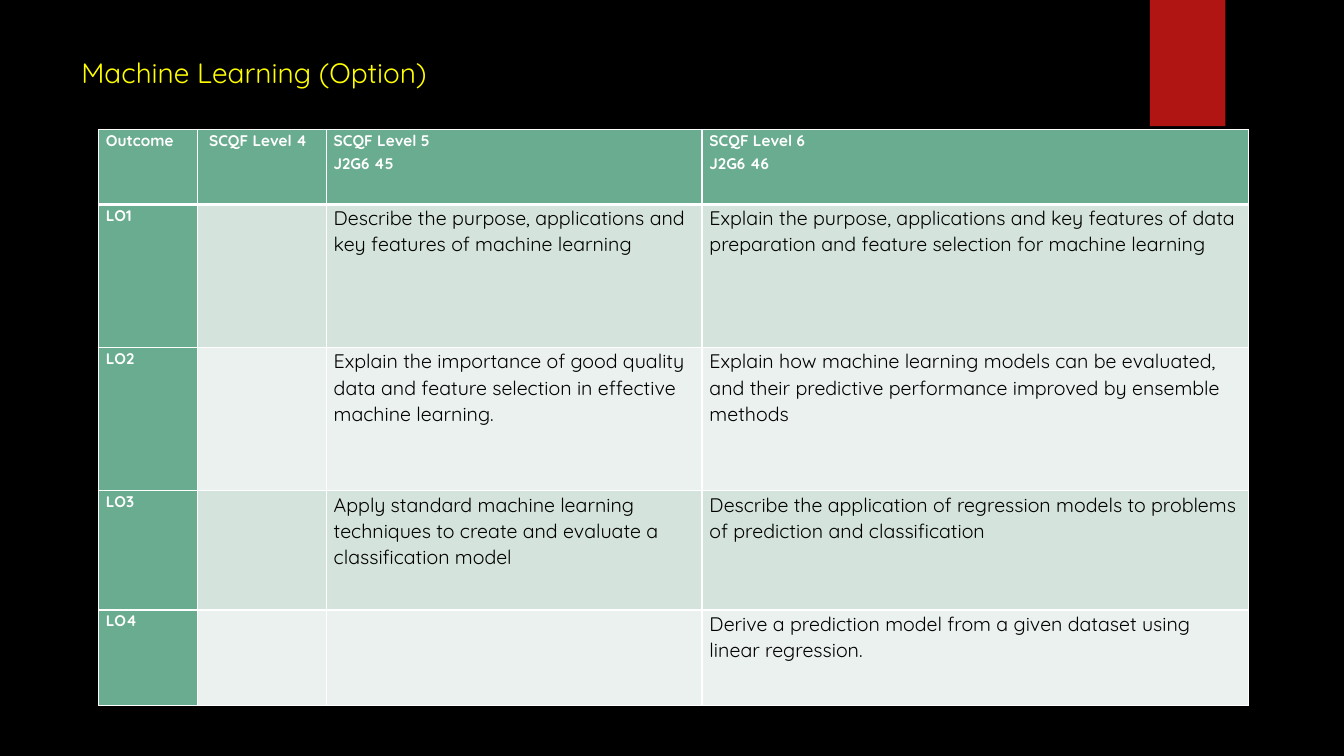
from lxml import etree
from pptx import Presentation, util as u
from pptx.dml.color import RGBColor
from pptx.enum import shapes, text
from pptx.oxml import ns

COLORS = {
    "background": "000000",
    "ribbon": "B01513",
    "title": "FFFF00",
    "heading": "6AAC90",
    "odd": "D4E3DB",
    "even": "EBF1EE",
    "light": "FFFFFF",
    "dark": "000000",
}

OUTCOMES = [
    ["Outcome", " SCQF Level 4", "SCQF Level 5\nJ2G6 45", "SCQF Level 6\nJ2G6 46"],
    ["LO1", "",
     "Describe the purpose, applications and key features of machine learning",
     "Explain the purpose, applications and key features of data preparation "
     "and feature selection for machine learning"],
    ["LO2", "",
     "Explain the importance of good quality data and feature selection in "
     "effective machine learning.",
     "Explain how machine learning models can be evaluated, and their predictive "
     "performance improved by ensemble methods"],
    ["LO3", "",
     "Apply standard machine learning techniques to create and evaluate a "
     "classification model",
     "Describe the application of regression models to problems of prediction "
     "and classification"],
    ["LO4", "", "",
     "Derive a prediction model from a given dataset using linear regression."],
]
COLUMN_WIDTHS = [2.49, 3.25, 9.47, 13.77]
ROW_HEIGHTS = [1.88, 3.61, 3.61, 3, 2.41]


class SlideBuilder:
    font = "Quicksand"

    def __init__(self, slide):
        self.slide = slide
        self.slide.background.fill.solid()
        self.slide.background.fill.fore_color.rgb = self.color("background")

    def color(self, name):
        return RGBColor.from_string(COLORS[name])

    def style(self, paragraph, size, color, bold=False):
        for run in paragraph.runs:
            run.font.name = self.font
            run.font.size = u.Pt(size)
            run.font.bold = bold
            run.font.color.rgb = self.color(color)

    def block(self, left, top, width, height, color):
        ribbon = self.slide.shapes.add_shape(
            shapes.MSO_SHAPE.RECTANGLE, *map(u.Cm, (left, top, width, height)))
        ribbon.shadow.inherit = False
        ribbon.fill.solid()
        ribbon.fill.fore_color.rgb = self.color(color)
        ribbon.line.fill.background()

    def title(self, words, left, top, width, height):
        heading = self.slide.shapes.add_textbox(*map(u.Cm, (left, top, width, height)))
        frame = heading.text_frame
        frame.word_wrap = True
        frame.vertical_anchor = text.MSO_ANCHOR.TOP
        frame.text = words
        self.style(frame.paragraphs[0], 20, "title")

    def borders(self, cell, bottom):
        properties = cell._tc.get_or_add_tcPr()
        for side, width in (("L", 1), ("R", 1), ("T", 1), ("B", bottom)):
            line = etree.SubElement(properties, ns.qn(f"a:ln{side}"), w=str(u.Pt(width)))
            fill = etree.SubElement(line, ns.qn("a:solidFill"))
            etree.SubElement(fill, ns.qn("a:srgbClr"), val=COLORS["light"])

    def cell(self, cell, words, fill, is_heading, bottom):
        self.borders(cell, bottom)
        cell.fill.solid()
        cell.fill.fore_color.rgb = self.color(fill)
        cell.margin_left = cell.margin_right = u.Cm(0.19)
        cell.margin_top = cell.margin_bottom = 0
        cell.text_frame.text = words
        for paragraph in cell.text_frame.paragraphs:
            paragraph.line_spacing = 1.07
            paragraph.space_after = u.Pt(1.9)
            if is_heading:
                self.style(paragraph, 11, "light", bold=True)
            else:
                self.style(paragraph, 14, "dark")

    def table(self, rows, left, top, widths, heights):
        grid = self.slide.shapes.add_table(
            len(rows), len(widths),
            *map(u.Cm, (left, top, sum(widths), sum(heights)))).table
        grid.first_col = True
        for column, width in zip(grid.columns, widths):
            column.width = u.Cm(width)
        for r, (row, height) in enumerate(zip(rows, heights)):
            grid.rows[r].height = u.Cm(height)
            for c, words in enumerate(row):
                is_heading = r == 0 or c == 0
                band = "odd" if r % 2 else "even"
                self.cell(grid.cell(r, c), words, "heading" if is_heading else band,
                          is_heading, 3 if r == 0 else 1)
                if r == 1:
                    top_line = grid.cell(r, c)._tc.tcPr.find(ns.qn("a:lnT"))
                    top_line.set("w", str(u.Pt(3)))


def main():
    deck = Presentation()
    deck.slide_width, deck.slide_height = u.Cm(33.87), u.Cm(19.05)
    builder = SlideBuilder(deck.slides.add_slide(deck.slide_layouts[6]))
    builder.block(28.98, 0, 1.9, 3.18, "ribbon")
    builder.title("Machine Learning (Option)", 1.8, 1.27, 26.14, 1.7)
    builder.table(OUTCOMES, 2.48, 3.27, COLUMN_WIDTHS, ROW_HEIGHTS)
    deck.save("out.pptx")


if __name__ == "__main__":
    main()
